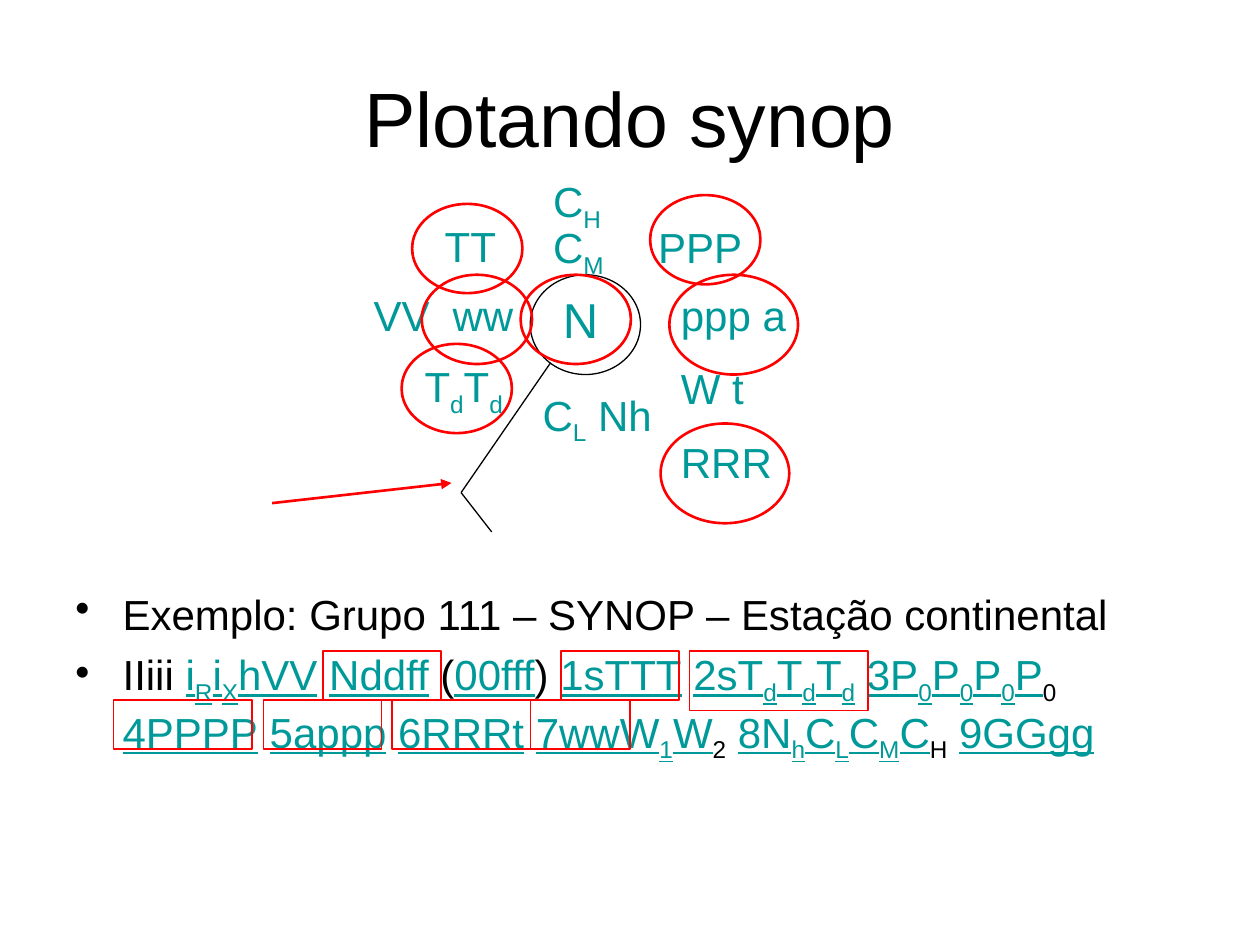
from lxml.etree import SubElement
from pptx import Presentation
from pptx.dml.color import RGBColor
from pptx.enum.shapes import MSO_CONNECTOR as Connector, MSO_SHAPE as Shape
from pptx.enum.text import MSO_ANCHOR as Anchor, PP_ALIGN as Align
from pptx.oxml.ns import qn
from pptx.util import Pt

BLACK, TEAL, RED = "000000", "009999", "FF0000"


def paint(color_format, color):
    color_format.rgb = RGBColor.from_string(color)


def add_span(para, text, size, color, underline=False, lowered=False):
    if not text:
        return
    span = para.add_run()
    span.text = text
    span.font.name = "Arial"
    span.font.size = Pt(size)
    span.font.underline = underline or None
    paint(span.font.color, color)
    if lowered:
        span.font._element.set("baseline", "-25000")


def add_marked(para, text, size, color):
    for index, part in enumerate(text.split("|")):
        linked = index % 2 == 1
        style = dict(size=size, color=TEAL if linked else color, underline=linked)
        plain, *lowered = part.split("_")
        add_span(para, plain, **style)
        for piece in lowered:
            add_span(para, piece[0], lowered=True, **style)
            add_span(para, piece[1:], **style)


def add_text(page, box, lines, size=24, color=TEAL, align=Align.LEFT, anchor=Anchor.TOP,
             before=13, spacing=None, tab=None, bullet=False):
    frame = page.shapes.add_textbox(*map(Pt, box)).text_frame
    frame.word_wrap = True
    frame.vertical_anchor = anchor
    for index, line in enumerate(lines):
        para = frame.paragraphs[0] if index == 0 else frame.add_paragraph()
        para.alignment = align
        para.space_before = Pt(before)
        if spacing:
            para.line_spacing = spacing
        props = para._p.get_or_add_pPr()
        if bullet:
            props.set("marL", str(Pt(27)))
            props.set("indent", str(Pt(-27)))
            SubElement(props, qn("a:buChar"), char="•")
        if tab:
            stops = SubElement(props, qn("a:tabLst"))
            SubElement(stops, qn("a:tab"), pos=str(Pt(tab)), algn="l")
        add_marked(para, line, size, color)


def add_outline(page, kind, box, color=RED, width=1.5):
    shape = page.shapes.add_shape(kind, *map(Pt, box))
    shape.shadow.inherit = False
    shape.fill.background()
    paint(shape.line.color, color)
    shape.line.width = Pt(width)


def add_line(page, start, end, color=BLACK, width=0.75, arrow=False):
    line = page.shapes.add_connector(Connector.STRAIGHT, *map(Pt, start + end))
    paint(line.line.color, color)
    line.line.width = Pt(width)
    if arrow:
        SubElement(line.line._get_or_add_ln(), qn("a:tailEnd"), type="triangle")
    SubElement(line._element.spPr, qn("a:effectLst"))


def add_title(page, box):
    add_text(page, box, ["Plotando synop"], size=44, color=BLACK,
             align=Align.CENTER, anchor=Anchor.MIDDLE, before=0)


def add_station_model(page, box):
    left, top = box[:2]

    def place(x, y, *size):
        return (left + x, top + y, *size)

    add_outline(page, Shape.OVAL, place(148, 57, 63, 57), color=BLACK, width=0.75)
    labels = [
        ((159.5, 62, 34, 41), ["N"], dict(size=28)),
        ((154, 0, 158, 53), ["C_H", "C_M\tPPP"], dict(before=0, spacing=0.8, tab=60)),
        ((227, 62, 130, 122), ["ppp a", "W t", "RRR"], {}),
        ((148, 119, 79, 36), ["C_L Nh"], {}),
        ((92, 22.5, 45.5, 36), ["TT"], {}),
        ((80.5, 102.5, 68.5, 36), ["T_dT_d"], {}),
        ((51.5, 62, 102, 36), ["VV\tww"], dict(tab=45)),
    ]
    for spot, lines, style in labels:
        add_text(page, place(*spot), lines, **style)

    joint = place(108.5, 181.5)
    add_line(page, place(159.5, 107.5), joint)
    add_line(page, joint, place(126, 204))

    small, large = (63, 51), (73.5, 57)
    rings = [(80.5, 16.5, small), (216.5, 11.5, small), (74.5, 96.5, small),
             (86, 57, small), (142.5, 57, small), (227.5, 57, large), (222.5, 142, large)]
    for x, y, size in rings:
        add_outline(page, Shape.OVAL, place(x, y, *size))
    add_line(page, place(0.5, 187.5), place(103, 176), color=RED, width=1.5, arrow=True)


def add_message(page, box):
    left, top = box[:2]
    groups = ("IIiii |i_Ri_XhVV| |Nddff| (|00fff|)\u00a0|1sTTT| |2sT_dT_dT_d| |3P_0P_0P_0P|_0 "
              "|4PPPP| |5appp| |6RRRt| |7wwW_1W|_2 |8N_hC_LC_MC|_H |9GGgg|")
    add_text(page, box, ["Exemplo: Grupo 111 – SYNOP – Estação continental", groups],
             color=BLACK, before=6, bullet=True)
    rows = [
        (39.5, [(148.5, 67.5, 28), (284.5, 67.5, 28), (358, 102, 34)]),
        (67.5, [(29, 79, 28), (114.5, 67.5, 28), (188, 79, 28), (267, 57, 28)]),
    ]
    for y, frames in rows:
        for x, width, height in frames:
            add_outline(page, Shape.RECTANGLE, (left + x, top + y, width, height), width=0.75)


def main():
    deck = Presentation()
    deck.slide_width, deck.slide_height = Pt(720), Pt(540)
    page = deck.slides.add_slide(deck.slide_layouts[6])
    add_title(page, (36, 21.5, 648, 90))
    add_message(page, (36, 332.5, 648, 150))
    add_station_model(page, (155, 100, 358, 204))
    deck.save("out.pptx")


if __name__ == "__main__":
    main()
